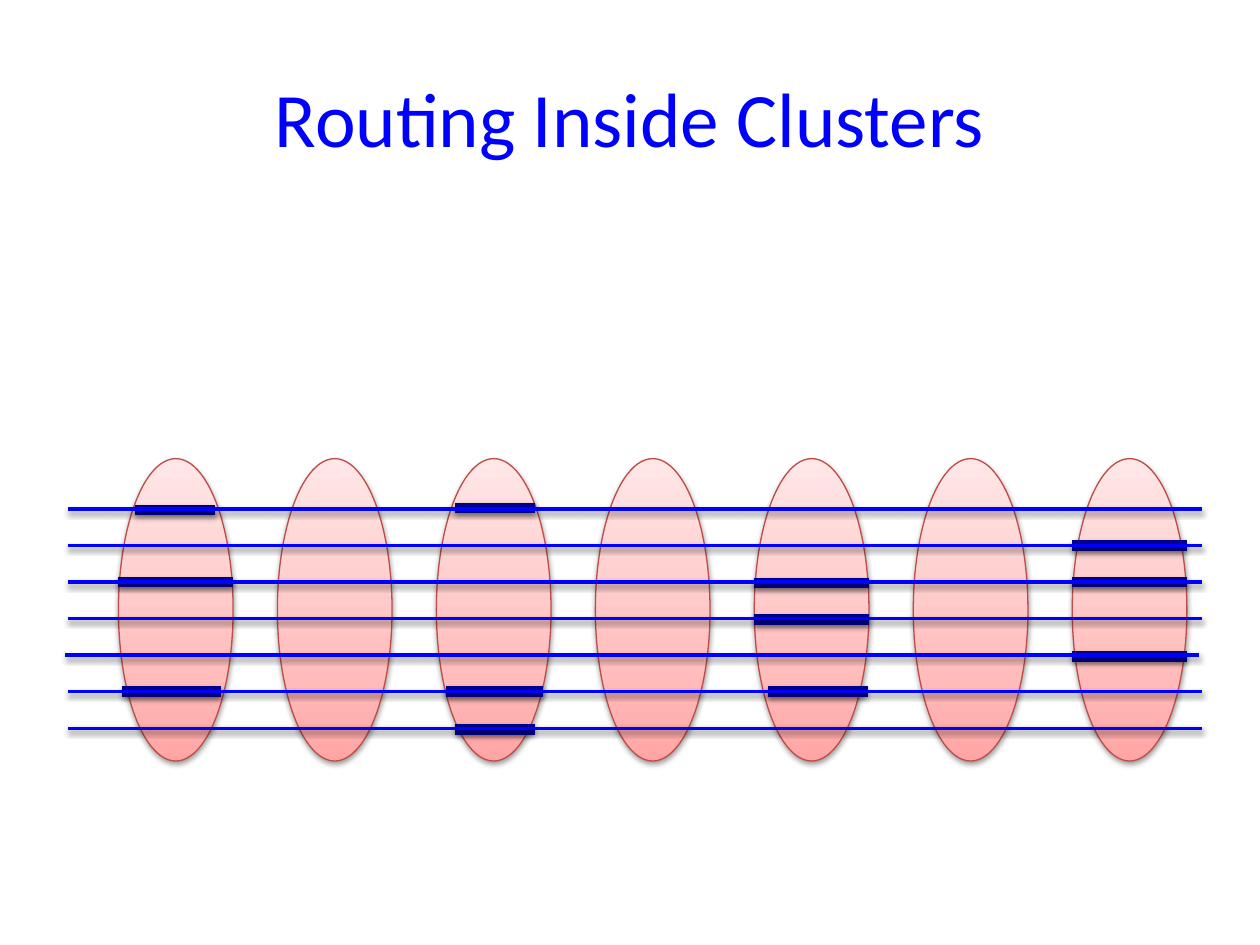
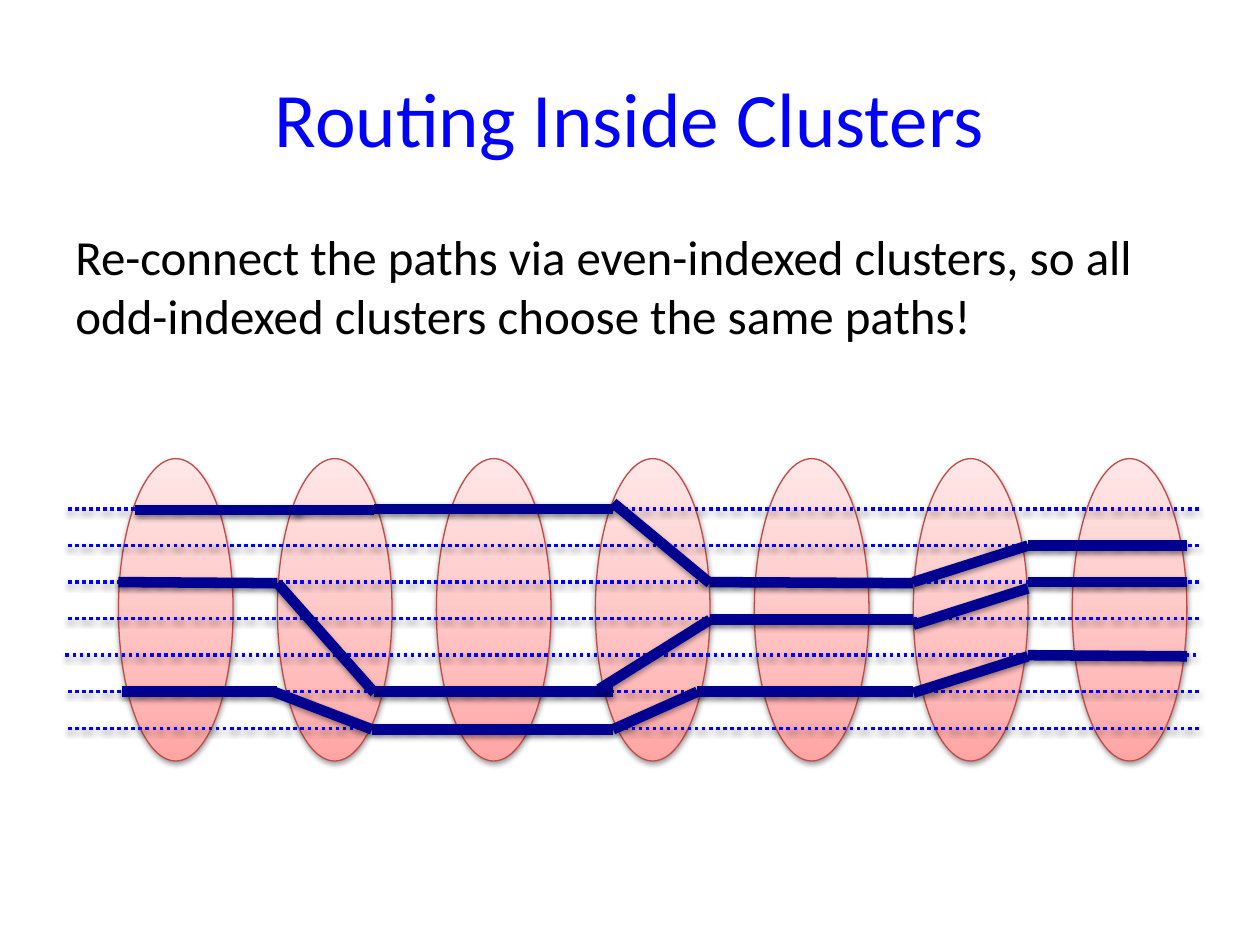
from copy import deepcopy

from pptx import Presentation
from pptx.dml.color import RGBColor
from pptx.enum.dml import MSO_LINE_DASH_STYLE as DASH
from pptx.enum.shapes import MSO_CONNECTOR as CONNECTOR, MSO_SHAPE as SHAPE
from pptx.enum.text import MSO_ANCHOR as ANCHOR, PP_ALIGN as ALIGN
from pptx.oxml import parse_xml
from pptx.oxml.ns import nsdecls, qn
from pptx.util import Inches, Pt

# Shared look
rgb = RGBColor.from_string
FONT = "Calibri"
BLUE, NAVY, RED, BLACK = "0000FF", "000090", "BF4C48", "000000"
CLUSTER_STOPS = [(0, "FFA6A5"), (0.35, "FFC0BF"), (1, "FFE7E7")]
SHADOW = (
    f'<a:effectLst {nsdecls("a")}>'
    '<a:outerShdw blurRad="40000" dist="20000" dir="5400000" rotWithShape="0">'
    '<a:srgbClr val="000000"><a:alpha val="38000"/></a:srgbClr>'
    "</a:outerShdw></a:effectLst>"
)

# Grid: seven clusters across, seven paths down
COUNT = 7
CLUSTER_TOP, CLUSTER_WIDTH, CLUSTER_HEIGHT = 3.64, 0.91, 2.4
FIRST_LEFT, LAST_LEFT = 0.94, 8.51
PATH_TOP, PATH_GAP, PATH_LENGTH = 4.04, 0.29, 9
left = [FIRST_LEFT + i * (LAST_LEFT - FIRST_LEFT) / (COUNT - 1) for i in range(COUNT)]
right = [x + CLUSTER_WIDTH for x in left]


def outline(shape, color, width):
    """Give a shape or connector its line and soft shadow."""
    shape.line.color.rgb = rgb(color)
    shape.line.width = Pt(width)
    shape.element.spPr.append(parse_xml(SHADOW))


def add_line(slide, x1, row1, x2, row2, color, width):
    """Draw a line between two points, with heights counted in path rows."""
    y1, y2 = (PATH_TOP + row * PATH_GAP for row in (row1, row2))
    line = slide.shapes.add_connector(
        CONNECTOR.STRAIGHT, Inches(x1), Inches(y1), Inches(x2), Inches(y2))
    outline(line, color, width)
    return line


# Chosen pieces inside odd clusters: cluster, row, left inset, right inset
chosen = [
    (0, 0.03, 0.13, 0.14), (0, 2, 0, 0), (0, 5, 0.03, 0.1),
    (2, -0.03, 0.15, 0.13), (2, 6.03, 0.15, 0.13), (2, 5, 0.08, 0.06),
    (6, 2, 0, 0), (6, 1, 0, 0), (6, 4.03, 0, 0),
    (4, 2.03, 0, 0), (4, 3.03, 0, 0), (4, 5, 0.11, 0.01),
]
chosen_segments = [
    (left[cluster] + inset_left, row, right[cluster] - inset_right, row)
    for cluster, row, inset_left, inset_right in chosen
]

# Re-connected routes: x, row, x, row
join, split = right[1] - 0.14, left[3] + 0.14
route_segments = [
    # Straight runs through the odd clusters
    (left[0] + 0.13, 0.03, left[1] + 0.19, 0.03),
    (left[0], 2, left[1], 2.03),
    (left[0] + 0.03, 5, left[1], 5),
    (join, 0, split, 0),
    (join - 0.02, 6.03, split, 6.03),
    (join, 5, split, 5),
    (right[5], 2, right[6], 2),
    (right[5], 1, right[6], 1),
    (right[5], 4, right[6], 4.03),
    (right[3], 2, left[5], 2.03),
    (right[3], 3.03, left[5], 3.03),
    (right[3] - 0.1, 5, left[5], 5),
    # Switches inside the even clusters
    (left[1] + 0.13, 0.03, join, 0.03),
    (join, 5.03, left[1], 2.03),
    (join - 0.02, 6.03, left[1] - 0.03, 5),
    (split, -0.17, right[3], 2.03),
    (split - 0.11, 4.93, right[3], 3.03),
    (split, 6.03, right[3] - 0.1, 5),
    (left[5], 2, right[5], 1),
    (left[5], 3.17, right[5], 2.17),
    (left[5], 5.03, right[5], 4.03),
]

message = ("Re-connect the paths via even-indexed clusters, "
           "so all odd-indexed clusters choose the same paths!")
title = ("Routing Inside Clusters", 0.3, 1.25, 44, BLUE, ALIGN.CENTER, ANCHOR.MIDDLE)
body = (message, 1.75, 2.27, 28, BLACK, ALIGN.LEFT, ANCHOR.TOP)

presentation = Presentation()
presentation.slide_width, presentation.slide_height = Inches(10), Inches(7.5)

for texts, rerouted in [([title], False), ([title, body], True)]:
    slide = presentation.slides.add_slide(presentation.slide_layouts[6])

    # Title and message
    for text, top, height, size, color, align, anchor in texts:
        box = slide.shapes.add_textbox(Inches(0.5), Inches(top), Inches(9), Inches(height))
        text_frame = box.text_frame
        text_frame.word_wrap = True
        text_frame.vertical_anchor = anchor
        text_frame.text = text
        paragraph = text_frame.paragraphs[0]
        paragraph.alignment = align
        font = paragraph.runs[0].font
        font.name, font.size, font.color.rgb = FONT, Pt(size), rgb(color)

    # Clusters
    for x in left:
        cluster = slide.shapes.add_shape(
            SHAPE.OVAL, Inches(x), Inches(CLUSTER_TOP),
            Inches(CLUSTER_WIDTH), Inches(CLUSTER_HEIGHT))
        cluster.fill.gradient()
        cluster.fill.gradient_angle = 90
        stop_list = cluster.element.spPr.find(".//" + qn("a:gsLst"))
        stop_list.append(deepcopy(stop_list[0]))
        for stop, (position, color) in zip(cluster.fill.gradient_stops, CLUSTER_STOPS):
            stop.position = position
            stop.color.rgb = rgb(color)
        outline(cluster, RED, 0.75)

    # Chosen pieces lie under the solid paths
    if not rerouted:
        for segment in chosen_segments:
            add_line(slide, *segment, NAVY, 6)

    # Paths
    for row in range(COUNT):
        start = 0.52 if row == 4 else 0.54
        path_line = add_line(slide, start, row, start + PATH_LENGTH, row, BLUE, 2)
        if rerouted:
            path_line.line.dash_style = DASH.ROUND_DOT

    # Routes lie over the dotted paths
    if rerouted:
        for segment in route_segments:
            add_line(slide, *segment, NAVY, 6)

presentation.save("out.pptx")
